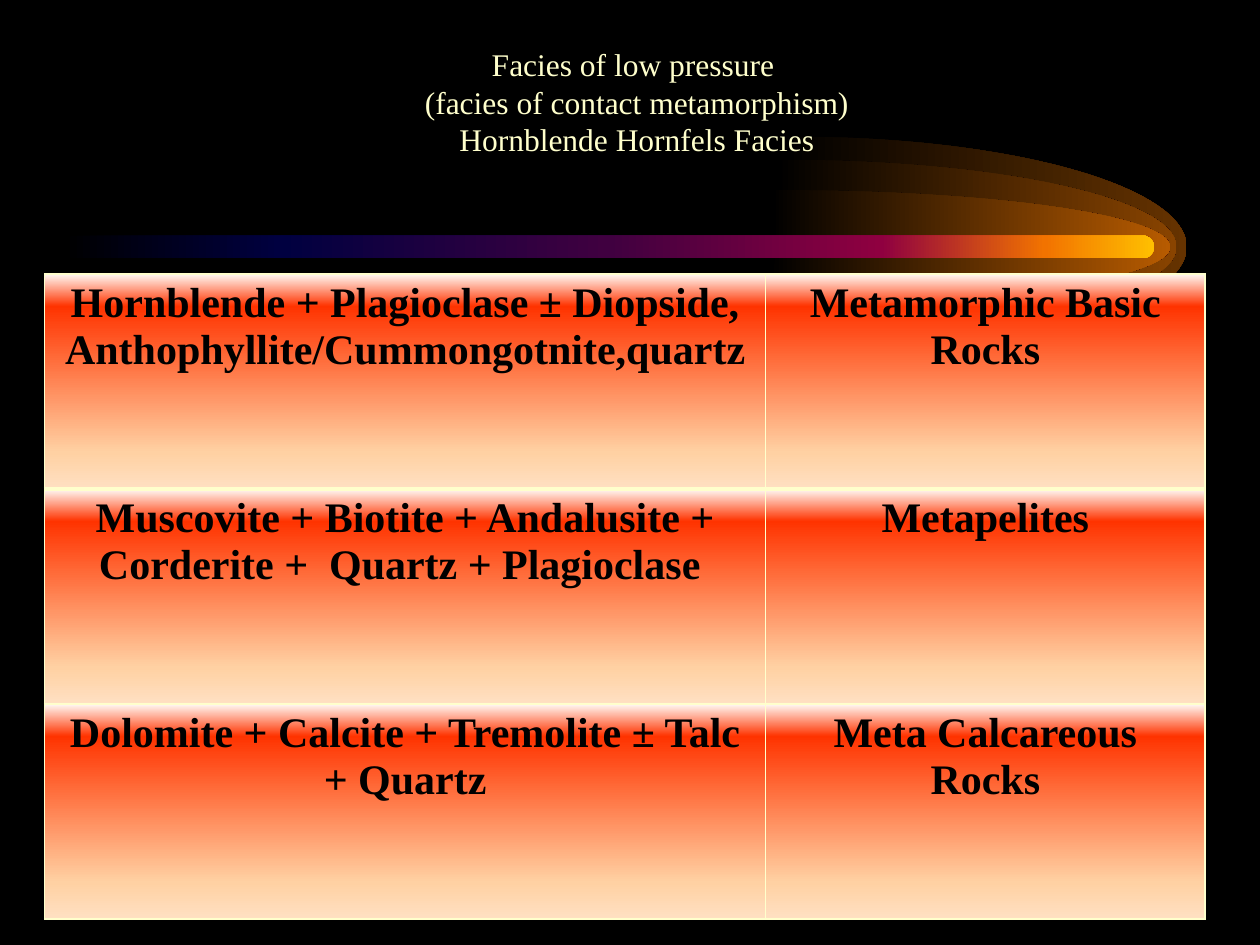
from dataclasses import dataclass

from lxml import etree
from pptx import Presentation
from pptx.dml.color import RGBColor
from pptx.enum.shapes import MSO_SHAPE
from pptx.enum.text import MSO_ANCHOR, MSO_AUTO_SIZE, PP_ALIGN
from pptx.oxml.ns import qn
from pptx.util import Pt

CENTER = PP_ALIGN.CENTER
TOP = MSO_ANCHOR.TOP
GROW = MSO_AUTO_SIZE.SHAPE_TO_FIT_TEXT
ROUNDED = MSO_SHAPE.ROUNDED_RECTANGLE
ARC_PULL = 0.55


@dataclass(frozen=True)
class Theme:
    """Colours, gradients and type sizes of the slide."""
    font: str = "Times New Roman"
    background: str = "000000"
    cream: str = "FFFFCC"
    cell_text: str = "000000"
    title_size: int = 18
    cell_size: int = 24
    thin: int = 1
    thick: int = 3
    glows: tuple = ("663300", "894400", "B75B00")
    streak: tuple = ((0, "000000"), (20, "000040"), (50, "400040"),
                     (75, "8F0040"), (90, "F27300"), (100, "FFBF00"))
    cell: tuple = ((0, "FFFAF5"), (15, "FF3300"), (83, "FFD1A3"), (100, "FFE0C2"))


THEME = Theme()
TITLE_LINES = ("Facies of low pressure ", "(facies of contact metamorphism)",
               "Hornblende Hornfels Facies")
ASSEMBLAGES = (
    ("Hornblende + Plagioclase ± Diopside, Anthophyllite/Cummongotnite,quartz",
     "Metamorphic Basic Rocks"),
    ("Muscovite + Biotite + Andalusite + Corderite +  Quartz + Plagioclase ",
     "Metapelites"),
    ("Dolomite + Calcite + Tremolite ± Talc + Quartz", "Meta Calcareous Rocks"),
)


def gradient(stops, angle):
    """Return a linear gradient fill element."""
    fill = etree.Element(qn("a:gradFill"), rotWithShape="1")
    stop_list = etree.SubElement(fill, qn("a:gsLst"))
    for percent, color in stops:
        stop = etree.SubElement(stop_list, qn("a:gs"), pos=str(percent * 1000))
        etree.SubElement(stop, qn("a:srgbClr"), val=color)
    etree.SubElement(fill, qn("a:lin"), ang=str(angle * 60000), scaled="0")
    return fill


def paint(shape, stops):
    """Give a shape a left-to-right gradient without line or shadow."""
    shape.shadow.inherit = False
    shape.line.fill.background()
    shape.fill.solid()
    solid = shape.element.spPr.find(qn("a:solidFill"))
    solid.getparent().replace(solid, gradient(stops, 0))


def write(paragraph, text, size, color, bold=False):
    """Add one centred, formatted run to a paragraph."""
    paragraph.alignment = CENTER
    run = paragraph.add_run()
    run.text = text
    run.font.name = THEME.font
    run.font.size = Pt(size)
    run.font.bold = bold
    run.font.color.rgb = RGBColor.from_string(color)


def bend(shape, curves):
    """Turn the first straight segments of a freeform into Bézier curves."""
    segments = list(shape.element.iter(qn("a:lnTo")))
    for segment, points in zip(segments, curves):
        curve = etree.Element(qn("a:cubicBezTo"))
        for x, y in points:
            etree.SubElement(curve, qn("a:pt"), x=str(Pt(x) - shape.left),
                             y=str(Pt(y) - shape.top))
        segment.getparent().replace(segment, curve)


def add_glow(slide, center_x, center_y, radius_x, radius_y, color):
    """Draw the right half of an ellipse, fading in from black."""
    top, bottom = center_y - radius_y, center_y + radius_y
    right = center_x + radius_x
    pull_x, pull_y = ARC_PULL * radius_x, ARC_PULL * radius_y
    corners = ((right, center_y), (center_x, bottom), (center_x - 3.6, bottom),
               (center_x, center_y))
    builder = slide.shapes.build_freeform(Pt(center_x), Pt(top))
    builder.add_line_segments([(Pt(x), Pt(y)) for x, y in corners], close=True)
    glow = builder.convert_to_shape()
    bend(glow, (
        ((center_x + pull_x, top), (right, center_y - pull_y), corners[0]),
        ((right, center_y + pull_y), (center_x + pull_x, bottom), corners[1]),
    ))
    paint(glow, ((0, THEME.background), (100, color)))


def add_comet(slide, left, top, width, height):
    """Draw the comet: three nested glows and a streak in the given box."""
    center_y = top + height / 2
    halos = ((416.9, 63), (411.1, 49.8), (407.5, 32.5))
    for (offset, radius_y), color in zip(halos, THEME.glows):
        add_glow(slide, left + offset, center_y, 225.2, radius_y, color)
    streak = slide.shapes.add_shape(ROUNDED, Pt(left), Pt(top), Pt(width), Pt(height))
    streak.adjustments[0] = 0.5
    paint(streak, THEME.streak)


def add_title(slide, left, top, width, height):
    """Place the three-line title in front of the comet."""
    title = slide.shapes.title
    slide.shapes.element.append(title.element)
    title.left, title.top, title.width, title.height = map(Pt, (left, top, width, height))
    frame = title.text_frame
    frame.word_wrap = True
    frame.auto_size = GROW
    frame.vertical_anchor = TOP
    for index, line in enumerate(TITLE_LINES):
        paragraph = frame.add_paragraph() if index else frame.paragraphs[0]
        write(paragraph, line, THEME.title_size, THEME.cream)


def style_cell(cell, bottom_width):
    """Set the borders and the vertical gradient of a cell."""
    properties = cell._tc.get_or_add_tcPr()
    widths = {"L": THEME.thin, "R": THEME.thin, "T": THEME.thin, "B": bottom_width}
    for side, width in widths.items():
        border = etree.SubElement(properties, qn(f"a:ln{side}"), w=str(Pt(width)))
        solid = etree.SubElement(border, qn("a:solidFill"))
        etree.SubElement(solid, qn("a:srgbClr"), val=THEME.cream)
    properties.append(gradient(THEME.cell, 90))


def add_assemblages(slide, left, top, width, height):
    """Fill the box with the table of mineral assemblages and rocks."""
    row_count = len(ASSEMBLAGES)
    table = slide.shapes.add_table(row_count, 2, Pt(left), Pt(top),
                                   Pt(width), Pt(height)).table
    table.first_row = table.horz_banding = False
    minerals_width = 412
    table.columns[0].width = Pt(minerals_width)
    table.columns[1].width = Pt(width - minerals_width)
    for row, texts in enumerate(ASSEMBLAGES):
        table.rows[row].height = Pt(height / row_count)
        for column, text in enumerate(texts):
            cell = table.cell(row, column)
            style_cell(cell, THEME.thin if row else THEME.thick)
            write(cell.text_frame.paragraphs[0], text, THEME.cell_size,
                  THEME.cell_text, bold=True)


def main():
    """Build and save the slide."""
    deck = Presentation()
    deck.slide_width, deck.slide_height = Pt(720), Pt(540)
    slide = deck.slides.add_slide(deck.slide_layouts[5])
    backdrop = slide.background.fill
    backdrop.solid()
    backdrop.fore_color.rgb = RGBColor.from_string(THEME.background)
    add_comet(slide, 36, 134.6, 623.5, 13)
    add_assemblages(slide, 25.5, 156.6, 663.1, 368.6)
    add_title(slide, 66.3, 22, 595.4, 72.7)
    deck.save("out.pptx")


if __name__ == "__main__":
    main()
